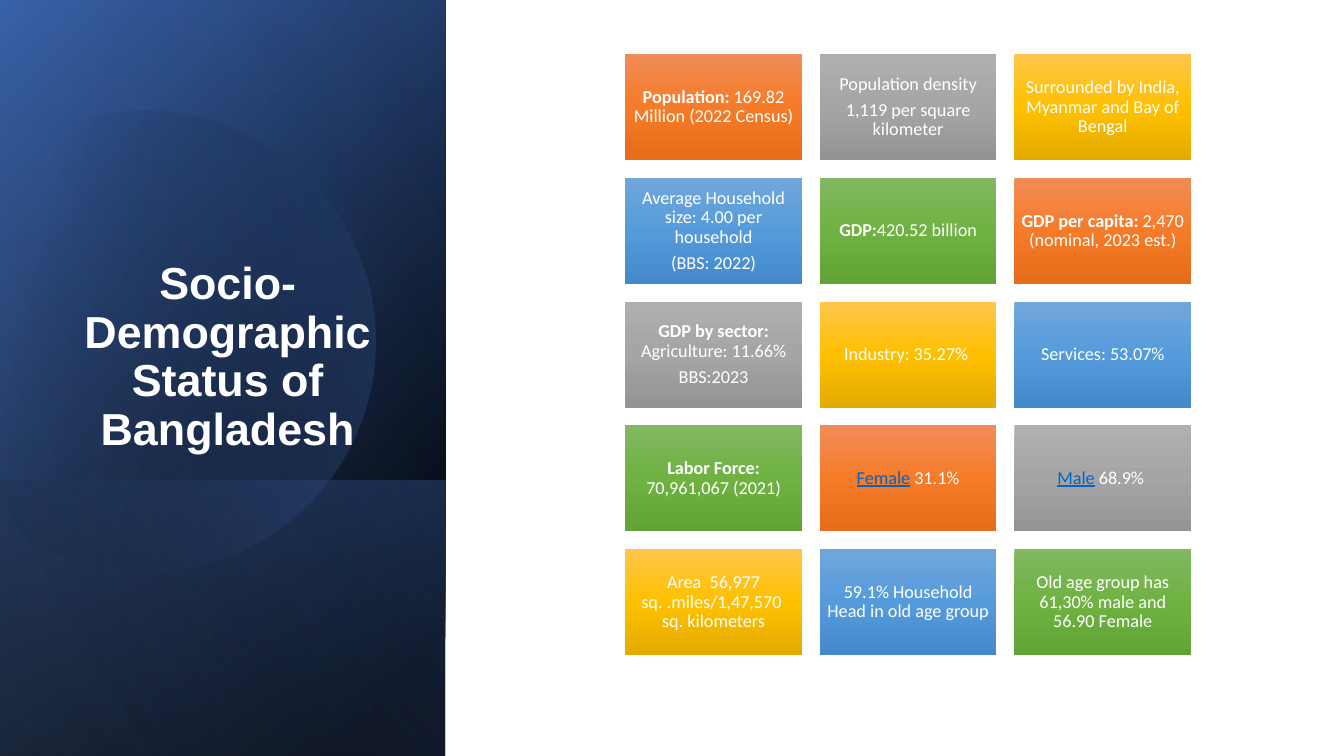
from itertools import pairwise
from math import cos, radians, sin, tan

from lxml.etree import SubElement
from pptx import Presentation
from pptx.dml.color import RGBColor
from pptx.enum.shapes import MSO_SHAPE
from pptx.enum.text import MSO_ANCHOR, MSO_AUTO_SIZE, PP_ALIGN
from pptx.oxml.ns import qn
from pptx.util import Pt

# Colours
WHITE = RGBColor(0xFF, 0xFF, 0xFF)
BLACK = RGBColor(0x00, 0x00, 0x00)
NAVY = RGBColor(0x2F, 0x55, 0x97)
BLUE = RGBColor(0x44, 0x72, 0xC4)
PALE_BLUE = RGBColor(0x8F, 0xAA, 0xDC)
LINK_BLUE = RGBColor(0x05, 0x63, 0xC1)

# Top, middle and bottom colour of each tile, in order of use
TILE_COLOURS = [
    (RGBColor(0xF1, 0x8C, 0x57), RGBColor(0xF6, 0x7B, 0x28), RGBColor(0xE5, 0x6C, 0x19)),
    (RGBColor(0xAF, 0xAF, 0xAF), RGBColor(0xA5, 0xA5, 0xA5), RGBColor(0x93, 0x93, 0x93)),
    (RGBColor(0xFF, 0xC6, 0x4B), RGBColor(0xFF, 0xC0, 0x00), RGBColor(0xE3, 0xAB, 0x00)),
    (RGBColor(0x71, 0xA6, 0xDB), RGBColor(0x55, 0x9B, 0xDB), RGBColor(0x44, 0x8A, 0xCA)),
    (RGBColor(0x81, 0xB8, 0x61), RGBColor(0x6F, 0xB2, 0x42), RGBColor(0x62, 0xA3, 0x36)),
]

# Each tile is a list of paragraphs, each paragraph a list of (text, style) runs
TILES = [
    [[("Population: ", "bold"), ("169.82 Million (2022 Census)", "plain")]],
    [[("Population density", "plain")], [("1,119 per square kilometer", "plain")]],
    [[("Surrounded by India, Myanmar and Bay of Bengal", "plain")]],
    [[("Average Household size: 4.00 per household", "plain")], [("(BBS: 2022)", "plain")]],
    [[("GDP:", "bold"), ("420.52 billion", "plain")]],
    [[("GDP per capita: ", "bold"), ("2,470 (nominal, 2023 est.)", "plain")]],
    [[("GDP by sector: ", "bold"), ("Agriculture: 11.66%", "plain")], [("BBS:2023", "plain")]],
    [[("Industry: 35.27% ", "plain")]],
    [[("Services: 53.07%", "plain")]],
    [[("Labor Force: ", "bold"), ("70,961,067 (2021)", "plain")]],
    [[("Female", "link"), (" 31.1%", "plain")]],
    [[("Male", "link"), (" 68.9% ", "plain")]],
    [[("Area  56,977 sq. .miles/1,47,570  sq. kilometers", "plain")]],
    [[("59.1% Household Head in old age group", "plain")]],
    [[("Old age group has 61,30% male and 56.90 Female", "plain")]],
]

# Layout in points
SLIDE_WIDTH, SLIDE_HEIGHT = 960, 540
PANEL_WIDTH = 318.2
COLUMNS = 3
TILE_LEFT, TILE_TOP = 446.5, 38.7
TILE_WIDTH, TILE_HEIGHT = 126.3, 75.7
COLUMN_STEP, ROW_STEP = 139, 88.4


class SlideBuilder:
    """Holds the text style and the current slide."""

    title_font, title_size = "Arial", Pt(32)
    tile_font, tile_size = "Calibri", Pt(13)
    tile_inset, tile_gap = Pt(3.6), Pt(4.55)
    line_spacing = 0.9

    def __init__(self, slide):
        self.slide = slide

    def paint(self, shape, stops, angle):
        """Fill with (position, colour, opacity) stops, all in percent; no line or shadow."""
        shape.shadow.inherit = False
        shape.line.fill.background()
        shape.fill.background()
        properties = shape.element.spPr
        empty_fill = properties.find(qn("a:noFill"))
        gradient = properties.makeelement(qn("a:gradFill"), {"rotWithShape": "1"})
        properties.replace(empty_fill, gradient)
        stop_list = SubElement(gradient, qn("a:gsLst"))
        for position, colour, opacity in stops:
            stop = SubElement(stop_list, qn("a:gs"), pos=str(position * 1000))
            tint = SubElement(stop, qn("a:srgbClr"), val=str(colour))
            if opacity < 100:
                SubElement(tint, qn("a:alpha"), val=str(opacity * 1000))
        SubElement(gradient, qn("a:lin"), ang=str(angle * 60000), scaled="0")

    def backdrop(self, colour):
        shape = self.slide.shapes.add_shape(
            MSO_SHAPE.RECTANGLE, 0, 0, Pt(SLIDE_WIDTH), Pt(SLIDE_HEIGHT))
        shape.shadow.inherit = False
        shape.line.fill.background()
        shape.fill.solid()
        shape.fill.fore_color.rgb = colour

    def panel(self, height, stops, angle):
        """Left band standing on the slide's bottom edge, turned a quarter and mirrored."""
        center_x, center_y = PANEL_WIDTH / 2, SLIDE_HEIGHT - height / 2
        shape = self.slide.shapes.add_shape(
            MSO_SHAPE.RECTANGLE,
            Pt(center_x - height / 2), Pt(center_y - PANEL_WIDTH / 2),
            Pt(height), Pt(PANEL_WIDTH))
        shape.rotation = 90
        shape.element.spPr.find(qn("a:xfrm")).set("flipH", "1")
        self.paint(shape, stops, angle)

    def cut_circle(self, center_x, center_y, radius, angles, rotation, stops, angle):
        """Circle through the given angles, closed by a chord from the last to the first."""
        def point(degrees, bulge=0):
            turn = radians(degrees)
            return (Pt(center_x + radius * (cos(turn) - bulge * sin(turn))),
                    Pt(center_y + radius * (sin(turn) + bulge * cos(turn))))

        corners = [point(degrees) for degrees in angles]
        builder = self.slide.shapes.build_freeform(*corners[0])
        builder.add_line_segments(corners[1:], close=True)
        shape = builder.convert_to_shape()

        # Bend each straight side into an arc
        sides = list(shape.element.iter(qn("a:lnTo")))
        for side, (start, end) in zip(sides, pairwise(angles)):
            bulge = 4 / 3 * tan(radians(end - start) / 4)
            curve = side.makeelement(qn("a:cubicBezTo"), {})
            side.getparent().replace(side, curve)
            for x, y in (point(start, bulge), point(end, -bulge), point(end)):
                SubElement(curve, qn("a:pt"), x=str(x - shape.left), y=str(y - shape.top))
        shape.rotation = rotation
        self.paint(shape, stops, angle)

    def title(self, text, left, top, width, height):
        title = self.slide.shapes.title
        title.left, title.top = Pt(left), Pt(top)
        title.width, title.height = Pt(width), Pt(height)
        title.element.getparent().append(title.element)  # bring to front
        frame = title.text_frame
        frame.text = text
        frame.word_wrap = True
        frame.auto_size = MSO_AUTO_SIZE.NONE
        frame.vertical_anchor = MSO_ANCHOR.BOTTOM
        paragraph = frame.paragraphs[0]
        paragraph.alignment = PP_ALIGN.CENTER
        paragraph.line_spacing = self.line_spacing
        font = paragraph.runs[0].font
        font.name, font.size, font.bold = self.title_font, self.title_size, True
        font.color.rgb = WHITE

    def tile(self, left, top, colours, paragraphs):
        shape = self.slide.shapes.add_shape(
            MSO_SHAPE.RECTANGLE, Pt(left), Pt(top), Pt(TILE_WIDTH), Pt(TILE_HEIGHT))
        self.paint(shape, [(50 * index, colour, 100) for index, colour in enumerate(colours)], 90)
        frame = shape.text_frame
        frame.word_wrap = True
        frame.vertical_anchor = MSO_ANCHOR.MIDDLE
        frame.margin_left = frame.margin_right = self.tile_inset
        frame.margin_top = frame.margin_bottom = self.tile_inset
        for index, runs in enumerate(paragraphs):
            paragraph = frame.add_paragraph() if index else frame.paragraphs[0]
            paragraph.alignment = PP_ALIGN.CENTER
            paragraph.line_spacing = self.line_spacing
            paragraph.space_after = self.tile_gap
            for text, style in runs:
                run = paragraph.add_run()
                run.text = text
                font = run.font
                font.name, font.size = self.tile_font, self.tile_size
                font.bold = style == "bold"
                font.underline = style == "link"
                font.color.rgb = LINK_BLUE if style == "link" else WHITE


def main():
    presentation = Presentation()
    presentation.slide_width = Pt(SLIDE_WIDTH)
    presentation.slide_height = Pt(SLIDE_HEIGHT)
    title_only = presentation.slide_layouts[5]
    builder = SlideBuilder(presentation.slides.add_slide(title_only))

    # Backdrop and left panel: layered gradients
    builder.backdrop(WHITE)
    builder.panel(SLIDE_HEIGHT, [(8, BLACK, 100), (100, NAVY, 100)], 50)
    builder.panel(SLIDE_HEIGHT, [(0, BLACK, 0), (99, BLUE, 46)], 30)
    builder.panel(197, [(2, BLUE, 29), (100, BLACK, 30)], 130)
    builder.cut_circle(103.4, 240.8, 164.5, (242, 270, 360, 450, 510), -16.1,
                       [(29, BLACK, 0), (100, BLUE, 43)], 30)
    builder.panel(SLIDE_HEIGHT, [(0, BLACK, 0), (99, PALE_BLUE, 11)], 120)

    # Title
    builder.title("Socio-Demographic Status of Bangladesh", 18, 160.6, 289.4, 167.8)

    # Grid of facts
    for index, paragraphs in enumerate(TILES):
        row, column = divmod(index, COLUMNS)
        builder.tile(TILE_LEFT + column * COLUMN_STEP, TILE_TOP + row * ROW_STEP,
                     TILE_COLOURS[index % len(TILE_COLOURS)], paragraphs)

    presentation.save("out.pptx")


if __name__ == "__main__":
    main()
